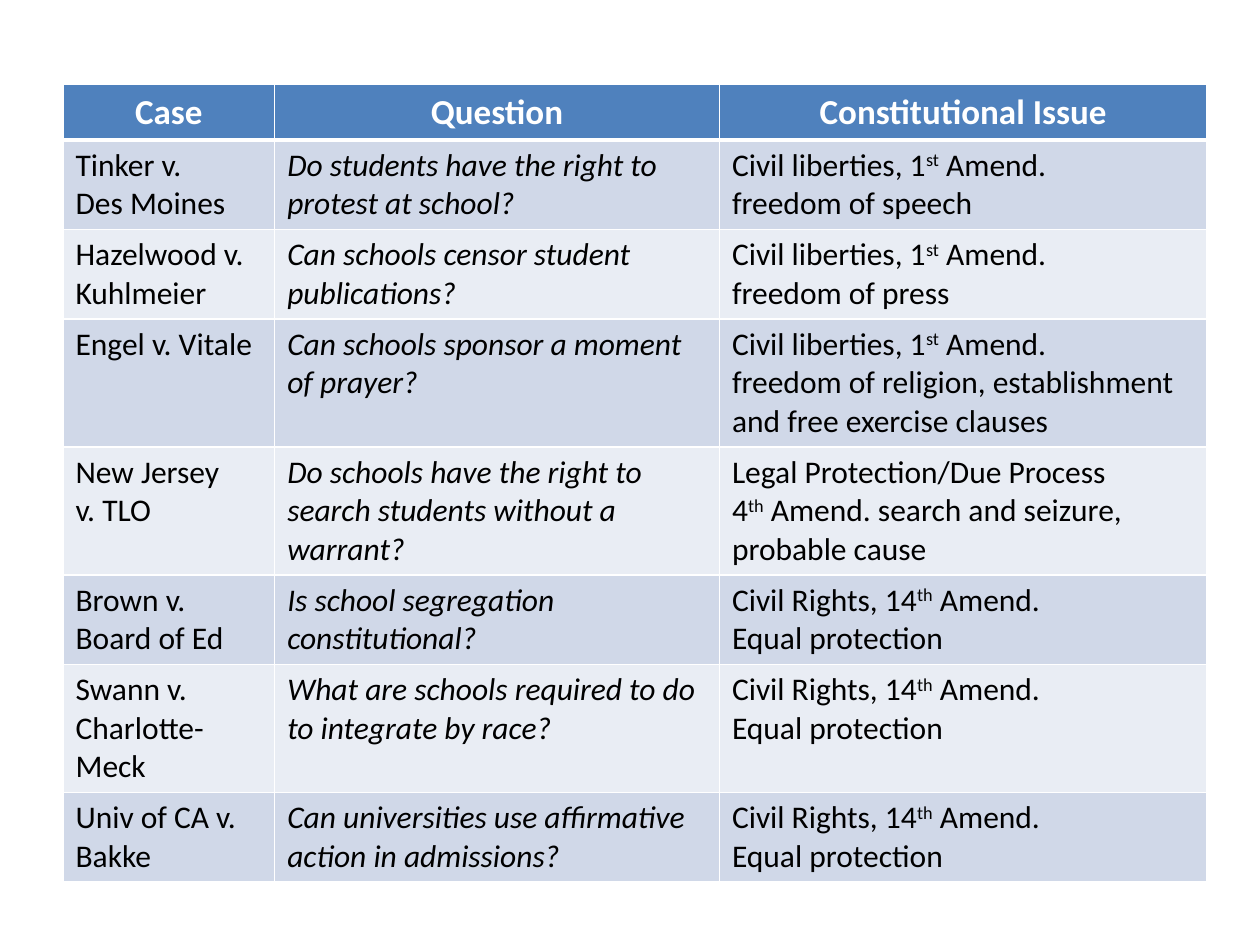
from dataclasses import dataclass

from lxml.etree import SubElement
from pptx import Presentation
from pptx.dml.color import RGBColor
from pptx.enum.text import MSO_ANCHOR as Anchor, PP_ALIGN as Align
from pptx.oxml.ns import qn
from pptx.table import _Cell as Cell
from pptx.util import Inches, Pt

COLORS = {
    "header": "4F81BD",
    "odd_band": "D0D8E8",
    "even_band": "E9EDF4",
    "rule": "FFFFFF",
    "header_text": "FFFFFF",
    "body_text": "000000",
}
FONT = "Calibri"
HEADINGS = ("Case", "Question", "Constitutional Issue")
COLUMN_WIDTHS = (1.68, 3.53, 3.87)
ROW_HEIGHT = 0.41
LIBERTIES = "Civil liberties, 1^st^ Amend.\n"
EQUAL_PROTECTION = ("Civil Rights, 14^th^ Amend.", "Equal protection")


@dataclass(frozen=True)
class CourtCase:
    title: str
    question: str
    issue: tuple[str, ...]


@dataclass(frozen=True)
class Style:
    size: int
    color: str
    bold: bool = False
    italic: bool = False
    align: Align | None = None
    anchor: Anchor = Anchor.TOP


HEADING = Style(20, "header_text", bold=True, align=Align.CENTER, anchor=Anchor.MIDDLE)
BODY = Style(18, "body_text")
QUESTION = Style(18, "body_text", italic=True)

CASES = (
    CourtCase("Tinker v. \nDes Moines",
              "Do students have the right to protest at school?",
              (LIBERTIES + "freedom of speech",)),
    CourtCase("Hazelwood v. Kuhlmeier",
              "Can schools censor student publications?",
              (LIBERTIES + "freedom of press",)),
    CourtCase("Engel v. Vitale",
              "Can schools sponsor a moment of prayer?",
              (LIBERTIES + "freedom of religion, establishment and free exercise clauses",)),
    CourtCase("New Jersey \nv. TLO",
              "Do schools have the right to search students without a warrant?",
              ("Legal Protection/Due Process",
               "4^th^ Amend. search and seizure, probable cause")),
    CourtCase("Brown v. Board of Ed",
              "Is school segregation constitutional?",
              EQUAL_PROTECTION),
    CourtCase("Swann v. Charlotte-Meck",
              "What are schools required to do to integrate by race?",
              EQUAL_PROTECTION),
    CourtCase("Univ of CA v. Bakke",
              "Can universities use affirmative action in admissions?",
              EQUAL_PROTECTION),
)


def rgb(name: str) -> RGBColor:
    return RGBColor.from_string(COLORS[name])


def add_runs(paragraph, text: str, style: Style) -> None:
    for part, piece in enumerate(text.split("^")):
        for number, line in enumerate(piece.split("\n")):
            if number:
                paragraph.add_line_break()
            run = paragraph.add_run()
            run.text = line
            font = run.font
            font.name, font.size = FONT, Pt(style.size)
            font.bold, font.italic = style.bold, style.italic
            font.color.rgb = rgb(style.color)
            if part % 2:
                run._r.get_or_add_rPr().set("baseline", "30000")


def add_borders(cell: Cell, bottom: int) -> None:
    properties = cell._tc.get_or_add_tcPr()
    sides = {"lnL": 1, "lnR": 1, "lnT": 1, "lnB": bottom}
    for position, (side, width) in enumerate(sides.items()):
        line = SubElement(properties, qn(f"a:{side}"), w=str(Pt(width)))
        fill = SubElement(line, qn("a:solidFill"))
        SubElement(fill, qn("a:srgbClr"), val=COLORS["rule"])
        properties.insert(position, line)


def fill_cell(cell: Cell, texts: tuple[str, ...], style: Style, fill: str, bottom: int = 1) -> None:
    cell.fill.solid()
    cell.fill.fore_color.rgb = rgb(fill)
    cell.vertical_anchor = style.anchor
    add_borders(cell, bottom)
    frame = cell.text_frame
    for number, text in enumerate(texts):
        paragraph = frame.add_paragraph() if number else frame.paragraphs[0]
        paragraph.alignment = style.align
        add_runs(paragraph, text, style)


def main() -> None:
    deck = Presentation()
    deck.slide_width, deck.slide_height = Inches(10), Inches(7.5)
    slide = deck.slides.add_slide(deck.slide_layouts[6])
    table = slide.shapes.add_table(
        len(CASES) + 1, len(HEADINGS),
        Inches(0.5), Inches(0.67), Inches(sum(COLUMN_WIDTHS)), Inches(6.23),
    ).table
    for column, width in zip(table.columns, COLUMN_WIDTHS):
        column.width = Inches(width)
    for row in table.rows:
        row.height = Inches(ROW_HEIGHT)

    for column, heading in enumerate(HEADINGS):
        fill_cell(table.cell(0, column), (heading,), HEADING, "header", bottom=3)
    for row, case in enumerate(CASES, start=1):
        band = "odd_band" if row % 2 else "even_band"
        top = 3 if row == 1 else 1
        fill_cell(table.cell(row, 0), (case.title,), BODY, band)
        fill_cell(table.cell(row, 1), (case.question,), QUESTION, band)
        fill_cell(table.cell(row, 2), case.issue, BODY, band)
        for column in range(len(HEADINGS)):
            border = table.cell(row, column)._tc.tcPr.find(qn("a:lnT"))
            border.set("w", str(Pt(top)))
    deck.save("out.pptx")


if __name__ == "__main__":
    main()
